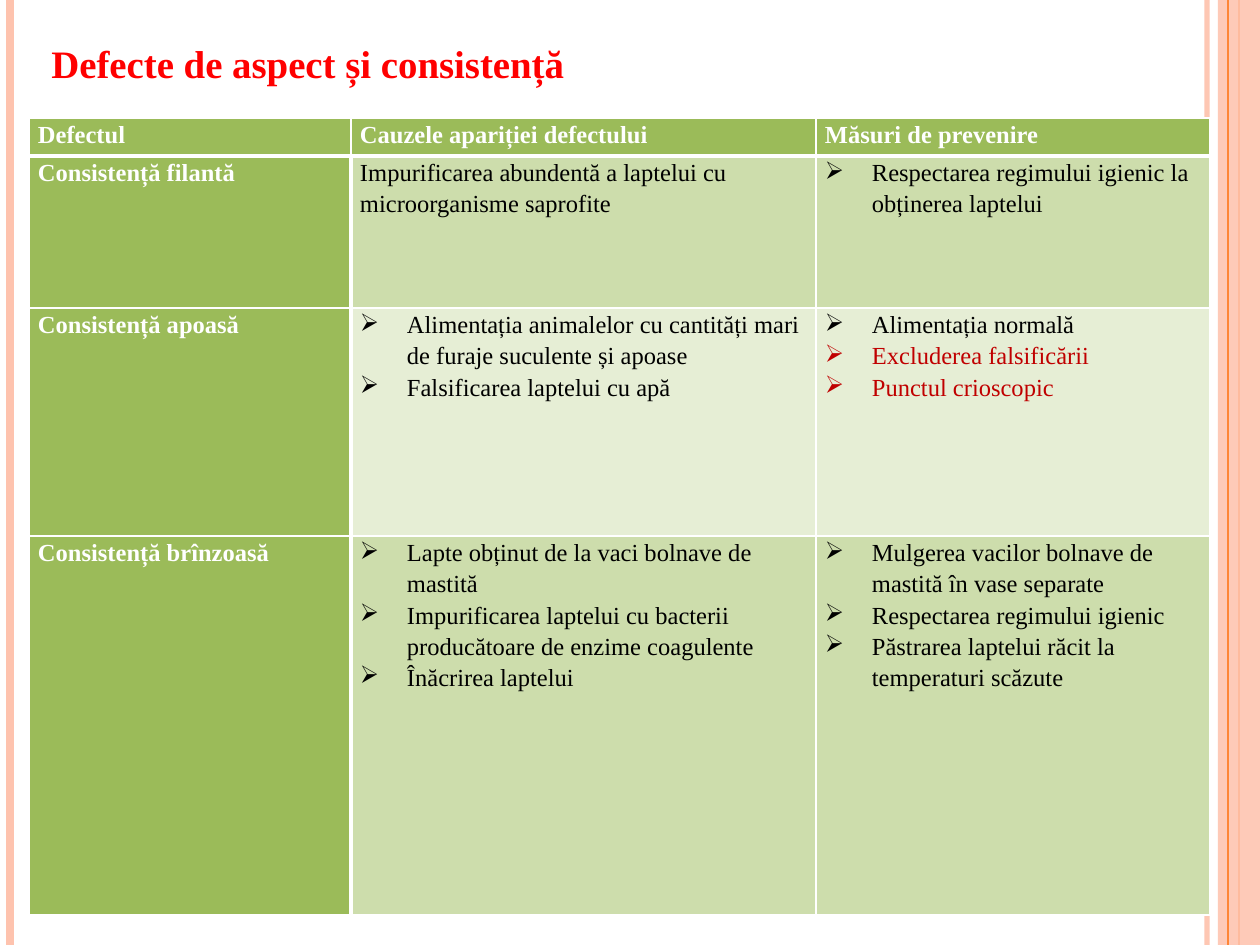
from lxml.etree import SubElement
from pptx import Presentation
from pptx.dml.color import RGBColor
from pptx.enum.shapes import MSO_CONNECTOR, MSO_SHAPE
from pptx.enum.text import MSO_ANCHOR
from pptx.oxml.ns import qn
from pptx.util import Emu, Pt

FONT = "Times New Roman"
WHITE = RGBColor(0xFF, 0xFF, 0xFF)
BLACK = RGBColor(0, 0, 0)
RED = RGBColor(0xFF, 0, 0)
DARK_RED = RGBColor(0xC0, 0, 0)
PEACH = RGBColor(0xFE, 0xC3, 0xAE)
ORANGE = RGBColor(0xFE, 0x86, 0x37)
GREEN = RGBColor(0x9B, 0xBB, 0x59)
LIGHT_GREEN = RGBColor(0xCD, 0xDD, 0xAC)
PALE_GREEN = RGBColor(0xE6, 0xEE, 0xD5)

SLIDE_W, SLIDE_H = 1260, 945
COLS = [322, 465, 394]
ROWS = [38, 152, 228, 379]
HEADER = ["Defectul", "Cauzele apariției defectului", "Măsuri de prevenire"]
DEFECTS = [
    ("Consistență filantă",
     "Impurificarea abundentă a laptelui cu microorganisme saprofite",
     ["Respectarea regimului igienic la obținerea laptelui"]),
    ("Consistență apoasă",
     ["Alimentația animalelor cu cantități mari de furaje suculente și apoase",
      "Falsificarea laptelui cu apă"],
     ["Alimentația normală", "Excluderea falsificării", "Punctul crioscopic"]),
    ("Consistență brînzoasă",
     ["Lapte obținut de la vaci bolnave de mastită",
      "Impurificarea laptelui cu bacterii producătoare de enzime coagulente",
      "Înăcrirea laptelui"],
     ["Mulgerea vacilor bolnave de mastită în vase separate",
      "Respectarea regimului igienic",
      "Păstrarea laptelui răcit la temperaturi scăzute"]),
]
HIGHLIGHTED = {"Excluderea falsificării", "Punctul crioscopic"}


def px(n):
    return Emu(round(n * 914400 / 126))


def set_alpha(fill, percent):
    color = fill.find(".//" + qn("a:srgbClr"))
    SubElement(color, qn("a:alpha"), val=str(percent * 1000))


def format_run(p, size, color, bold):
    font = p.runs[0].font
    font.name, font.size, font.bold = FONT, Pt(size), bold
    font.color.rgb = color


def set_indent(p, n):
    pPr = p._p.get_or_add_pPr()
    pPr.set("marL", str(px(n)))
    pPr.set("indent", str(-px(n)))
    return pPr


def add_rule(s, x, top, height, color, width, alpha=100):
    line = s.shapes.add_connector(
        MSO_CONNECTOR.STRAIGHT, px(x), px(top), px(x), px(top + height))
    line.line.color.rgb = color
    line.line.width = Pt(width)
    if alpha < 100:
        set_alpha(line.line._ln, alpha)
    SubElement(line._element.spPr, qn("a:effectLst"))


def add_side_bands(s, left, top, width, height):
    right = left + width
    add_rule(s, right - 53, top, height, PEACH, 3, 93)
    add_rule(s, left + 10, top, height, PEACH, 4.5)
    add_rule(s, right - 21, top, height, ORANGE, 1.5)
    band = s.shapes.add_shape(
        MSO_SHAPE.RECTANGLE, px(right - 42), px(top), px(42), px(height))
    band.shadow.inherit = False
    band.fill.solid()
    band.fill.fore_color.rgb = PEACH
    set_alpha(band._element.spPr, 87)
    band.line.fill.background()
    add_rule(s, right - 32, top, height, ORANGE, 0.75)


def add_title(s, left, top, width, height):
    tf = s.shapes.add_textbox(px(left), px(top), px(width), px(height)).text_frame
    tf.word_wrap = True
    tf.vertical_anchor = MSO_ANCHOR.MIDDLE
    tf.text = "Defecte de aspect și consistență"
    p = tf.paragraphs[0]
    p.line_spacing = 1.05
    set_indent(p, 38)
    format_run(p, 22.2, RED, True)


def set_borders(cell, row, col):
    widths = {
        "lnL": 3 if row and col == 1 else 1,
        "lnR": 3 if row and col == 0 else 1,
        "lnT": 3 if row == 1 else 1,
        "lnB": 3 if row == 0 else 1,
    }
    tcPr = cell._tc.get_or_add_tcPr()
    for side, width in widths.items():
        ln = SubElement(tcPr, qn("a:" + side), w=str(Pt(width)))
        SubElement(SubElement(ln, qn("a:solidFill")), qn("a:srgbClr"), val=str(WHITE))


def fill_cell(cell, content, row, col):
    heading = row == 0 or col == 0
    set_borders(cell, row, col)
    cell.fill.solid()
    cell.fill.fore_color.rgb = (
        GREEN if heading else LIGHT_GREEN if row % 2 else PALE_GREEN)
    cell.margin_left = cell.margin_right = px(9)
    cell.margin_top = cell.margin_bottom = 0
    bulleted = isinstance(content, list)
    cell.text_frame.text = "\n".join(content) if bulleted else content
    for p in cell.text_frame.paragraphs:
        p.line_spacing = 1.15
        if bulleted:
            SubElement(set_indent(p, 47), qn("a:buChar"), char="➢")
        color = WHITE if heading else DARK_RED if p.text in HIGHLIGHTED else BLACK
        format_run(p, 14, color, heading)


def add_defect_table(s, left, top, width, height):
    table = s.shapes.add_table(
        len(ROWS), len(COLS), px(left), px(top), px(width), px(height)).table
    for column, w in zip(table.columns, COLS):
        column.width = px(width * w / sum(COLS))
    for row, h in zip(table.rows, ROWS):
        row.height = px(height * h / sum(ROWS))
    for r, contents in enumerate([HEADER, *DEFECTS]):
        for c, content in enumerate(contents):
            fill_cell(table.cell(r, c), content, r, c)


def main():
    prs = Presentation()
    prs.slide_width, prs.slide_height = px(SLIDE_W), px(SLIDE_H)
    s = prs.slides.add_slide(prs.slide_layouts[6])
    add_side_bands(s, 0, 0, SLIDE_W, SLIDE_H)
    add_title(s, 39, 29, 1029, 66)
    add_defect_table(s, 29, 118, sum(COLS), sum(ROWS))
    prs.save("out.pptx")


if __name__ == "__main__":
    main()
